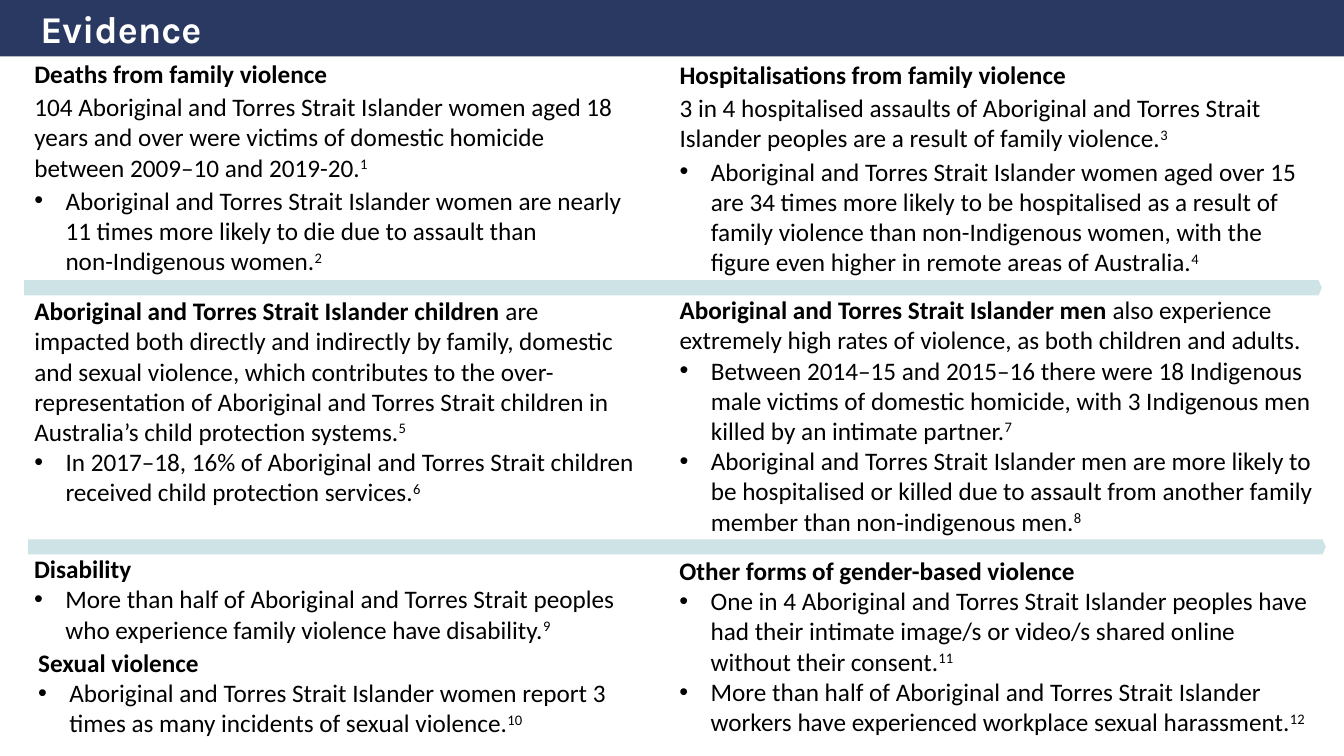
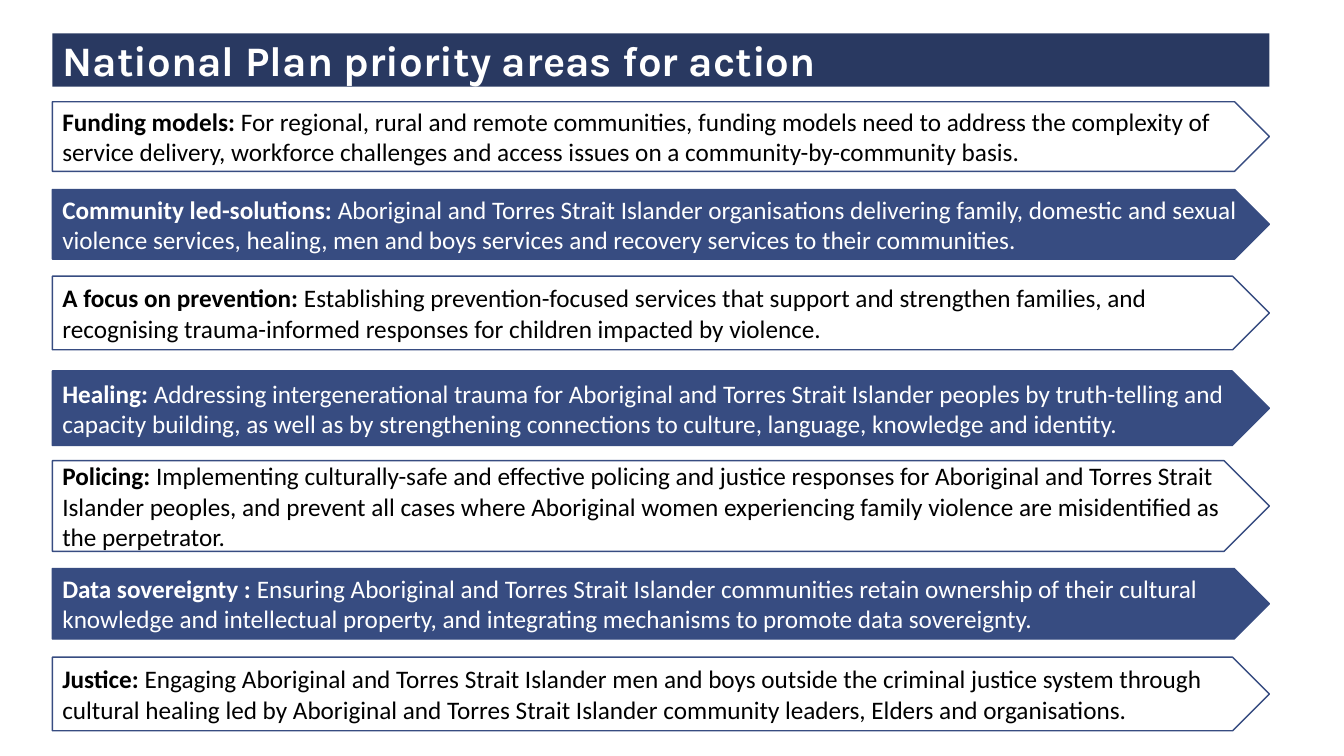
import pptx
import pptx.dml.color
import pptx.enum.shapes
import pptx.enum.text
import pptx.util
from lxml import etree
from pptx.oxml.ns import qn

Inches = pptx.util.Inches
Pt = pptx.util.Pt
HOME_PLATE = pptx.enum.shapes.MSO_SHAPE.PENTAGON
LEFT = pptx.enum.text.PP_ALIGN.LEFT
TOP = pptx.enum.text.MSO_ANCHOR.TOP
MIDDLE = pptx.enum.text.MSO_ANCHOR.MIDDLE
NO_AUTOFIT = pptx.enum.text.MSO_AUTO_SIZE.NONE

NAVY, BLUE, PALE = "293961", "374C81", "CDE3E6"
BLACK, WHITE = "000000", "FFFFFF"
INDENT = 0.31


def rgb(colour):
    return pptx.dml.color.RGBColor.from_string(colour)


def write_paragraph(paragraph, bold, plain="", note="", colour=BLACK, bullet=False, after=0):
    """Write a bold lead, plain text and a superscript note number."""
    properties = paragraph._p.get_or_add_pPr()
    indent = Inches(INDENT) if bullet else 0
    properties.set("marL", str(indent))
    properties.set("indent", str(-indent))
    if bullet:
        etree.SubElement(properties, qn("a:buFont")).set("typeface", "Arial")
        etree.SubElement(properties, qn("a:buChar")).set("char", "•")
    else:
        etree.SubElement(properties, qn("a:buNone"))
    paragraph.alignment = LEFT
    paragraph.space_before = Pt(0)
    paragraph.space_after = Pt(after)
    for text, is_bold, baseline in ((bold, True, 0), (plain, False, 0), (note, False, 30000)):
        for index, line in enumerate(text.split("\n") if text else []):
            if index:
                paragraph.add_line_break()
            run = paragraph.add_run()
            run.text = line
            run.font.name = "Calibri"
            run.font.size = Pt(18)
            run.font.bold = is_bold
            run.font.color.rgb = rgb(colour)
            if baseline:
                run._r.get_or_add_rPr().set("baseline", str(baseline))


presentation = pptx.Presentation()
presentation.slide_width = Inches(13.33)
presentation.slide_height = Inches(7.5)

# Each slide: layout, title, title size, band position and size, left inset
title_bands = [
    ("Comparison", "Evidence", 27, (0, 0, 13.33, 0.56), 0.4),
    ("Title Only", "National Plan priority areas for action", 30, (0.52, 0.33, 12.07, 0.53), 0.1),
]
for layout_name, heading, size, band, inset in title_bands:
    slide = presentation.slides.add_slide(presentation.slide_layouts.get_by_name(layout_name))
    title = slide.shapes.title
    title.left, title.top, title.width, title.height = map(Inches, band)
    title.fill.solid()
    title.fill.fore_color.rgb = rgb(NAVY)
    text_frame = title.text_frame
    text_frame.text = heading
    text_frame.auto_size = NO_AUTOFIT
    text_frame.vertical_anchor = MIDDLE
    text_frame.margin_left = Inches(inset)
    paragraph = text_frame.paragraphs[0]
    paragraph.alignment = LEFT
    font = paragraph.runs[0].font
    font.name = "Karla"
    font.size = Pt(size)
    font.bold = True
    font.color.rgb = rgb(WHITE)

evidence_slide, priorities_slide = presentation.slides

# Evidence: two columns of findings, with dividers between the rows
for left, top in ((0.24, 2.78), (0.28, 5.35)):
    divider = evidence_slide.shapes.add_shape(
        HOME_PLATE, Inches(left), Inches(top), Inches(12.87), Inches(0.15))
    divider.adjustments[0] = 0.215
    divider.shadow.inherit = False
    divider.fill.solid()
    divider.fill.fore_color.rgb = rgb(PALE)
    divider.line.fill.background()

# Each panel: position and size, space after, lead (bold, plain, note),
# then bullets (text, note)
panels = [
    ((0.24, 0.53, 6.16, 2.28), 2, [
        ("Deaths from family violence",),
        ("", "104 Aboriginal and Torres Strait Islander women aged 18 years and over were victims "
             "of domestic homicide between 2009–10 and 2019-20.", "1"),
    ], [
        ("Aboriginal and Torres Strait Islander women are nearly 11 times more likely to die due "
         "to assault than\nnon-Indigenous women.", "2"),
    ]),
    ((6.64, 0.54, 6.34, 2.28), 2, [
        ("Hospitalisations from family violence",),
        ("", "3 in 4 hospitalised assaults of Aboriginal and Torres Strait Islander peoples are "
             "a result of family violence.", "3"),
    ], [
        ("Aboriginal and Torres Strait Islander women aged over 15 are 34 times more likely to be "
         "hospitalised as a result of family violence than non-Indigenous women, with the figure "
         "even higher in remote areas of Australia.", "4"),
    ]),
    ((0.24, 2.88, 6.17, 2.22), 0, [
        ("Aboriginal and Torres Strait Islander children ",
         "are impacted both directly and indirectly by family, domestic and sexual violence, which "
         "contributes to the over-representation of Aboriginal and Torres Strait children in "
         "Australia’s child protection systems.", "5"),
    ], [
        ("In 2017–18, 16% of Aboriginal and Torres Strait children received child protection "
         "services.", "6"),
    ]),
    ((6.64, 2.87, 6.51, 2.73), 0, [
        ("Aboriginal and Torres Strait Islander men ",
         "also experience extremely high rates of violence, as both children and adults."),
    ], [
        ("Between 2014–15 and 2015–16 there were 18 Indigenous male victims of domestic homicide, "
         "with 3 Indigenous men killed by an intimate partner.", "7"),
        ("Aboriginal and Torres Strait Islander men are more likely to be hospitalised or killed "
         "due to assault from another family member than non-indigenous men.", "8"),
    ]),
    ((0.24, 5.44, 6.17, 1.01), 0, [("Disability",)], [
        ("More than half of Aboriginal and Torres Strait peoples who experience family violence "
         "have disability.", "9"),
    ]),
    ((0.28, 6.37, 6.36, 1.01), 0, [("Sexual violence",)], [
        ("Aboriginal and Torres Strait Islander women report 3 times as many incidents of sexual "
         "violence.", "10"),
    ]),
    ((6.64, 5.46, 6.46, 1.95), 0, [("Other forms of gender-based violence",)], [
        ("One in 4 Aboriginal and Torres Strait Islander peoples have had their intimate image/s "
         "or video/s shared online without their consent.", "11"),
        ("More than half of Aboriginal and Torres Strait Islander workers have experienced "
         "workplace sexual harassment.", "12"),
    ]),
]
# The layout's body placeholders hold the first panels, text boxes the rest
bodies = [body for body in evidence_slide.placeholders if body.placeholder_format.idx != 0]
for box, after, leads, bullets in panels:
    position = [Inches(length) for length in box]
    panel = bodies.pop(0) if bodies else evidence_slide.shapes.add_textbox(*position)
    panel.left, panel.top, panel.width, panel.height = position
    text_frame = panel.text_frame
    text_frame.word_wrap = True
    text_frame.auto_size = NO_AUTOFIT
    text_frame.vertical_anchor = TOP
    entries = [(lead, False) for lead in leads] + [(("", *item), True) for item in bullets]
    for index, (parts, bullet) in enumerate(entries):
        paragraph = text_frame.add_paragraph() if index else text_frame.paragraphs[0]
        write_paragraph(paragraph, *parts, bullet=bullet, after=after)

# Priority areas: a column of arrows, outlined and filled in turn
priorities = [
    (1.01, 0.69, "Funding models: ",
     "For regional, rural and remote communities, funding models need to address the complexity of "
     "service delivery, workforce challenges and access issues on a community-by-community basis."),
    (1.88, 0.69, "Community led-solutions: ",
     "Aboriginal and Torres Strait Islander organisations delivering family, domestic and sexual "
     "violence services, healing, men and boys services and recovery services to their "
     "communities."),
    (2.74, 0.73, "A focus on prevention: ",
     "Establishing prevention-focused services that support and strengthen families, and "
     "recognising trauma-informed responses for children impacted by violence."),
    (3.68, 0.74, "Healing: ",
     "Addressing intergenerational trauma for Aboriginal and Torres Strait Islander peoples by "
     "truth-telling and capacity building, as well as by strengthening connections to culture, "
     "language, knowledge and identity."),
    (4.57, 0.9, "Policing: ",
     "Implementing culturally-safe and effective policing and justice responses for Aboriginal and "
     "Torres Strait Islander peoples, and prevent all cases where Aboriginal women experiencing "
     "family violence are misidentified as the perpetrator."),
    (5.64, 0.7, "Data sovereignty : ",
     "Ensuring Aboriginal and Torres Strait Islander communities retain ownership of their cultural "
     "knowledge and intellectual property, and integrating mechanisms to promote data "
     "sovereignty."),
    (6.52, 0.73, "Justice: ",
     "Engaging Aboriginal and Torres Strait Islander men and boys outside the criminal justice "
     "system through cultural healing led by Aboriginal and Torres Strait Islander community "
     "leaders, Elders and organisations."),
]
for index, (top, height, name, description) in enumerate(priorities):
    filled = index % 2 == 1
    arrow = priorities_slide.shapes.add_shape(
        HOME_PLATE, Inches(0.52), Inches(top), Inches(12.07), Inches(height))
    arrow.shadow.inherit = False
    arrow.line.color.rgb = rgb(BLUE)
    arrow.line.width = Pt(1)
    if filled:
        arrow.fill.solid()
        arrow.fill.fore_color.rgb = rgb(BLUE)
    else:
        arrow.fill.background()
    arrow.text_frame.word_wrap = True
    arrow.text_frame.vertical_anchor = MIDDLE
    write_paragraph(arrow.text_frame.paragraphs[0], name, description,
                    colour=WHITE if filled else BLACK)

presentation.save("out.pptx")
